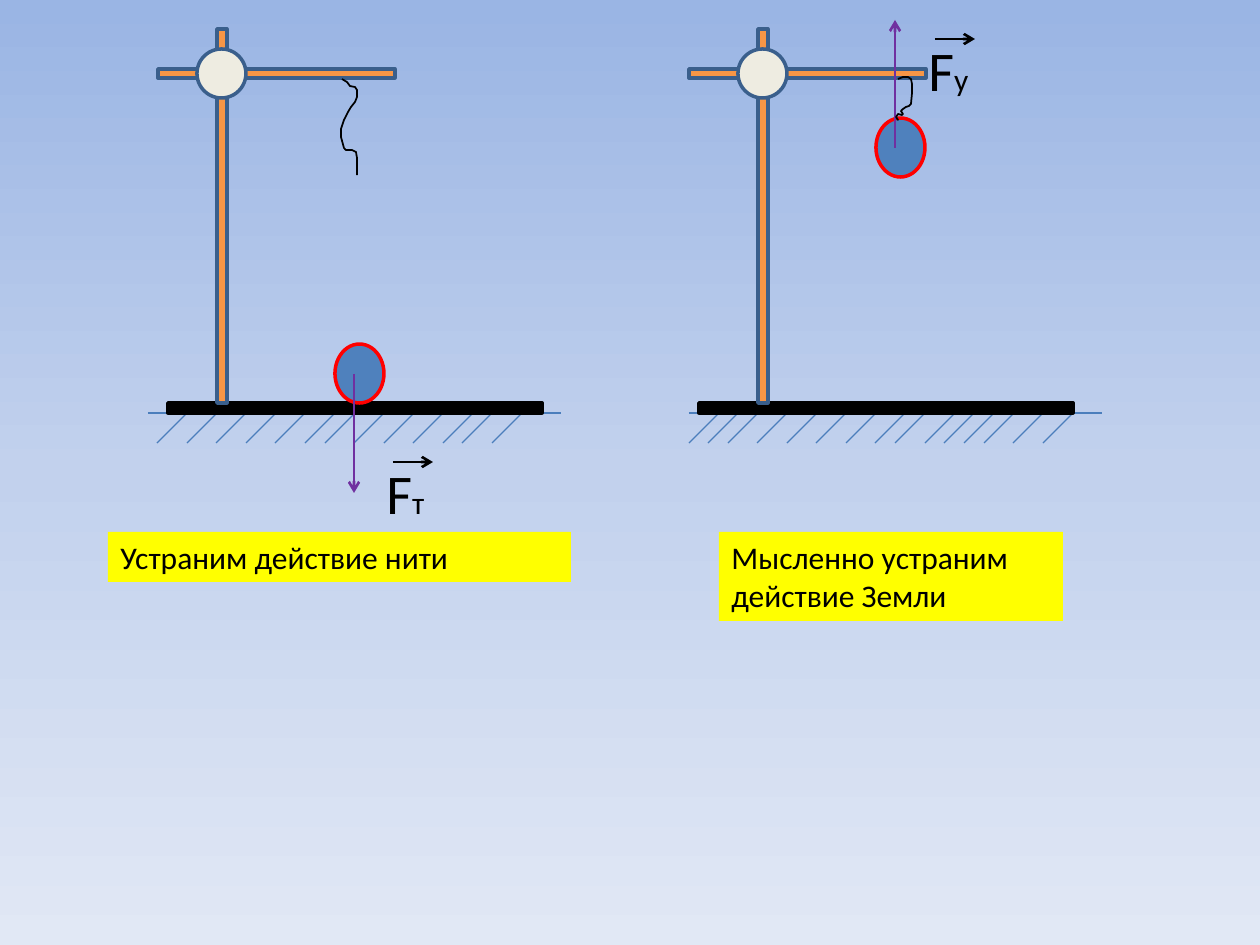
import copy

import pptx
import pptx.util
import pptx.dml.color
import pptx.enum.shapes
import pptx.enum.text
import pptx.oxml.ns
import pptx.oxml.xmlchemy

RGB = pptx.dml.color.RGBColor
SHAPES = pptx.enum.shapes.MSO_SHAPE
BLACK = RGB(0x00, 0x00, 0x00)
YELLOW = RGB(0xFF, 0xFF, 0x00)
RED = RGB(0xFF, 0x00, 0x00)
PURPLE = RGB(0x70, 0x30, 0xA0)
ORANGE = RGB(0xF7, 0x96, 0x46)
CREAM = RGB(0xEE, 0xEC, 0xE1)
BALL_BLUE = RGB(0x4F, 0x81, 0xBD)
GROUND_BLUE = RGB(0x4B, 0x7E, 0xBC)
STEEL_BLUE = RGB(0x3A, 0x5F, 0x8C)
SKY = [(0, RGB(0x9A, 0xB5, 0xE4)), (0.5, RGB(0xC2, 0xD1, 0xED)),
       (1, RGB(0xE1, 0xE8, 0xF5))]

SCALE = 914400 / 126  # EMU in one px
GRID = 9.84  # px between drawing grid lines


def px(length):
    return pptx.util.Emu(round(length * SCALE))


def add_block(page, kind, left, top, width, height, fill, outline):
    block = page.shapes.add_shape(kind, px(left), px(top), px(width), px(height))
    block.shadow.inherit = False
    block.fill.solid()
    block.fill.fore_color.rgb = fill
    block.line.color.rgb = outline
    block.line.width = pptx.util.Pt(2)


def add_line(page, start, end, color, width, arrow=False):
    line = page.shapes.add_connector(
        pptx.enum.shapes.MSO_CONNECTOR.STRAIGHT, *map(px, start + end))
    line.line.color.rgb = color
    line.line.width = pptx.util.Pt(width)
    properties = line._element.spPr
    if arrow:
        head = pptx.oxml.xmlchemy.OxmlElement("a:tailEnd")
        head.set("type", "arrow")
        properties.find(pptx.oxml.ns.qn("a:ln")).append(head)
    properties.append(pptx.oxml.xmlchemy.OxmlElement("a:effectLst"))


def add_text(page, left, top, width, height, spans, fill=None):
    """Place one paragraph made of (words, size) spans."""
    box = page.shapes.add_textbox(px(left), px(top), px(width), px(height))
    if fill is not None:
        box.fill.solid()
        box.fill.fore_color.rgb = fill
    box.text_frame.word_wrap = True
    box.text_frame.auto_size = pptx.enum.text.MSO_AUTO_SIZE.SHAPE_TO_FIT_TEXT
    para = box.text_frame.paragraphs[0]
    for words, size in spans:
        span = para.add_run()
        span.text = words
        span.font.name = "Calibri"
        span.font.size = pptx.util.Pt(size)
        span.font.color.rgb = BLACK


def add_thread(page, left, top, points):
    """Draw a thin open line through points relative to its hook."""
    (first_x, first_y), *rest = [(left + x, top + y) for x, y in points]
    builder = page.shapes.build_freeform(first_x, first_y, scale=SCALE)
    builder.add_line_segments(rest, close=False)
    thread = builder.convert_to_shape()
    thread.shadow.inherit = False
    thread.fill.background()
    thread.line.color.rgb = BLACK
    thread.line.width = pptx.util.Pt(1)


def paint_background(page):
    fill = page.background.fill
    fill.gradient()
    fill.gradient_angle = 270
    stops = page._element.find(".//" + pptx.oxml.ns.qn("a:gsLst"))
    stops.insert(1, copy.deepcopy(stops[0]))
    for stop, (position, color) in zip(fill.gradient_stops, SKY):
        stop.position = position
        stop.color.rgb = color


def draw_stand(page, left, top, plate, bar, hatches):
    """Ground, plate, post, bar and clamp; hatches are in grid units."""
    ground = top + 390
    add_line(page, (left, ground), (left + 413, ground), GROUND_BLUE, 0.75)
    for unit in hatches:
        x = left + round(unit * GRID)
        add_line(page, (x, ground), (x - 30, ground + 30), GROUND_BLUE, 0.75)
    add_block(page, SHAPES.RECTANGLE, left + plate, top + 380, 374, 10, BLACK, BLACK)
    add_block(page, SHAPES.RECTANGLE, left + 69, top + 6, 10, 374, ORANGE, STEEL_BLUE)
    add_block(page, SHAPES.RECTANGLE, left + bar, top + 46, 237, 9, ORANGE, STEEL_BLUE)
    add_block(page, SHAPES.FLOWCHART_CONNECTOR, left + 49, top + 26, 49, 49,
              CREAM, STEEL_BLUE)


def draw_ball(page, left, top, force):
    """Ball with its force arrow; a positive force points down."""
    add_block(page, SHAPES.OVAL, left, top, 49, 59, BALL_BLUE, RED)
    start = (left + 19, top + 30)
    add_line(page, start, (start[0], start[1] + force), PURPLE, 1.5, arrow=True)


def label_force(page, left, top, index):
    """Force symbol with the vector arrow above it."""
    add_text(page, left, top, 178, 81, [("F", 32), (index, 18)])
    add_line(page, (left + 19, top + 10), (left + 59, top + 10), BLACK, 1.5,
             arrow=True)


def main():
    deck = pptx.Presentation()
    deck.slide_width, deck.slide_height = px(1260), px(945)
    page = deck.slides.add_slide(deck.slide_layouts[6])
    paint_background(page)

    # Left: the thread no longer acts
    draw_stand(page, 148, 23, plate=20, bar=10,
               hatches=[4, 7, 10, 13, 16, 19, 21, 24, 27, 30, 33, 35, 38])
    add_thread(page, 342, 79, [
        (0, 0), (5, 3), (8, 7), (13, 8), (15, 11), (15, 18), (13, 23), (9, 28),
        (6, 33), (2, 41), (-1, 50), (-1, 58), (2, 69), (4, 71), (10, 71),
        (14, 73), (15, 79), (15, 96)])
    draw_ball(page, 335, 344, force=119)
    label_force(page, 374, 452, "т")
    add_text(page, 108, 532, 463, 50, [("Устраним действие нити", 18)], fill=YELLOW)

    # Right: the Earth no longer acts
    draw_stand(page, 689, 23, plate=10, bar=0,
               hatches=[3, 5, 7, 10, 13, 16, 19, 22, 24, 27, 29, 31, 33, 36, 39])
    draw_ball(page, 876, 118, force=-128)
    label_force(page, 916, 29, "у")
    add_thread(page, 898, 79, [
        (0, 0), (5, -2), (10, -2), (13, 0), (14, 5), (14, 14), (13, 25), (11, 27),
        (8, 28), (5, 30), (3, 32), (5, 35), (4, 36), (0, 35), (-2, 38), (0, 41),
        (-1, 39)])
    add_text(page, 719, 532, 344, 89, [("Мысленно устраним действие Земли", 18)],
             fill=YELLOW)

    deck.save("out.pptx")


if __name__ == "__main__":
    main()
